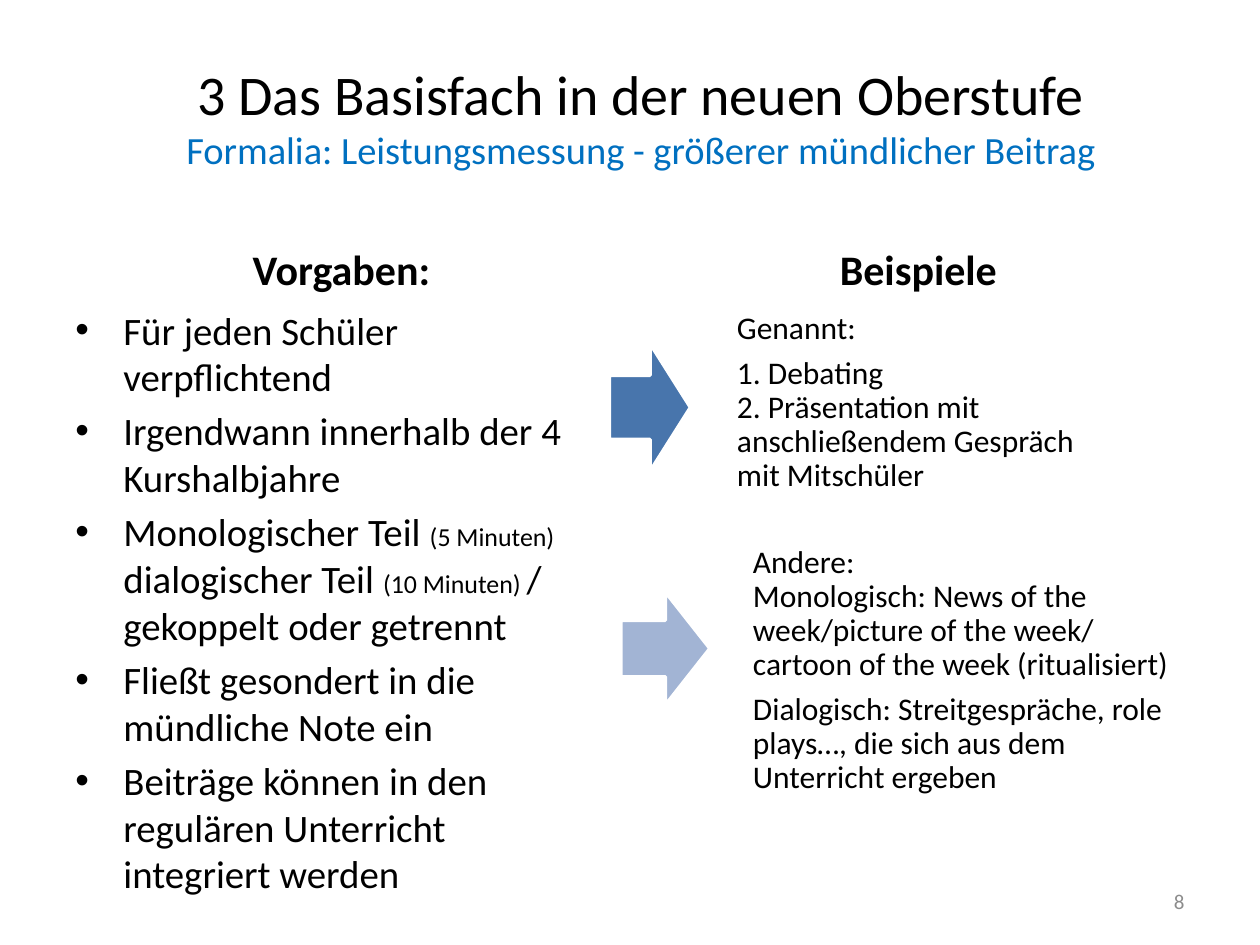
from dataclasses import dataclass

from lxml import etree
from pptx import Presentation, util as u
from pptx.dml.color import RGBColor
from pptx.enum import shapes, text
from pptx.oxml import ns

PX = 914400 // 126  # one px in EMU


@dataclass(frozen=True)
class Theme:
    font: str = "Calibri"
    ink: str = "000000"
    accent: str = "0070C0"
    muted: str = "8C8C8C"
    white: str = "FFFFFF"
    arrow_dark: str = "4875AC"
    arrow_light: str = "A2B4D4"
    title: float = 32
    subtitle: float = 22
    heading: float = 24
    bullet: float = 22.2
    detail: float = 14.8
    example: float = 18
    number: float = 12


T = Theme()

# Content: each paragraph is a list of (text, size) or (text, size, colour) runs
TITLE = [("3 Das Basisfach in der neuen Oberstufe\n", T.title),
         ("Formalia: Leistungsmessung - größerer mündlicher Beitrag", T.subtitle, T.accent)]
HEADINGS = [("Vorgaben:", 63), ("Beispiele", 640)]
RULES = [
    [("Für jeden Schüler verpflichtend", T.bullet)],
    [("Irgendwann innerhalb der 4 Kurshalbjahre", T.bullet)],
    [("Monologischer Teil ", T.bullet), ("(5 Minuten) ", T.detail),
     ("dialogischer Teil ", T.bullet), ("(10 Minuten) ", T.detail),
     ("/ gekoppelt oder getrennt", T.bullet)],
    [("Fließt gesondert in die mündliche Note ein", T.bullet)],
    [("Beiträge können in den regulären Unterricht integriert werden", T.bullet)],
]
EXAMPLES = [
    ((719, 300, 407, 224),
     ["Genannt:",
      "1. Debating \n2. Präsentation mit anschließendem Gespräch mit Mitschüler"]),
    ((735, 512, 485, 336),
     ["Andere:\nMonologisch: News of the week/picture of the week/\n"
      "cartoon of the week (ritualisiert)",
      "Dialogisch: Streitgespräche, role plays…, die sich aus dem Unterricht ergeben"]),
]
ARROWS = [
    (shapes.MSO_SHAPE.UP_ARROW, (586, 367, 128, 81), 90, T.arrow_dark),
    (shapes.MSO_SHAPE.DOWN_ARROW, (609, 604, 113, 89), 270, T.arrow_light),
]


def emu(rect):
    return [value * PX for value in rect]


def colour(value):
    return RGBColor.from_string(value)


def write(para, spans, bold=False):
    """Add runs to a paragraph; a newline becomes a line break of the run's size."""
    for words, size, *ink in spans:
        for index, line in enumerate(words.split("\n")):
            if index:
                para.add_line_break()
                mark = para._p.findall(ns.qn("a:br"))[-1]
                etree.SubElement(mark, ns.qn("a:rPr"), sz=str(round(size * 100)))
            if line:
                span = para.add_run()
                span.text = line
                span.font.name = T.font
                span.font.size = u.Pt(size)
                span.font.bold = bold
                span.font.color.rgb = colour(ink[0] if ink else T.ink)


def fill_frame(box, paragraphs, anchor, align, bold=False, before=0, after=0, spacing=1.0):
    frame = box.text_frame
    frame.word_wrap = True
    frame.auto_size = text.MSO_AUTO_SIZE.NONE
    frame.vertical_anchor = anchor
    for index, spans in enumerate(paragraphs):
        para = frame.add_paragraph() if index else frame.paragraphs[0]
        para.alignment = align
        para.line_spacing = spacing
        para.space_before, para.space_after = u.Pt(before), u.Pt(after)
        write(para, spans, bold)
    return frame


def add_bullet(para, indent):
    props = para._p.get_or_add_pPr()
    props.set("marL", str(indent * PX))
    props.set("indent", str(-indent * PX))
    etree.SubElement(props, ns.qn("a:buFont"), typeface="Arial")
    etree.SubElement(props, ns.qn("a:buChar"), char="•")


def main():
    deck = Presentation()
    deck.slide_width, deck.slide_height = emu((1260, 945))
    page = deck.slides.add_slide(deck.slide_layouts[5])
    middle, top, bottom = (text.MSO_ANCHOR.MIDDLE, text.MSO_ANCHOR.TOP,
                           text.MSO_ANCHOR.BOTTOM)
    left, center, right = text.PP_ALIGN.LEFT, text.PP_ALIGN.CENTER, text.PP_ALIGN.RIGHT

    # Title
    title = page.shapes.title
    title.left, title.top, title.width, title.height = emu((74, 37, 1134, 158))
    fill_frame(title, [TITLE], middle, center)

    # Column headings
    for words, x in HEADINGS:
        box = page.shapes.add_textbox(*emu((x, 212, 557, 88)))
        fill_frame(box, [[(words, T.heading)]], bottom, center, bold=True)

    # Bulleted rules
    box = page.shapes.add_textbox(*emu((63, 300, 537, 544)))
    frame = fill_frame(box, RULES, top, left, before=4.4)
    for para in frame.paragraphs:
        add_bullet(para, 48)

    # Arrows towards the examples
    for kind, rect, turn, tone in ARROWS:
        arrow = page.shapes.add_shape(kind, *emu(rect))
        arrow.rotation = turn
        arrow.shadow.inherit = False
        arrow.fill.solid()
        arrow.fill.fore_color.rgb = colour(tone)
        arrow.line.color.rgb = colour(T.white)
        arrow.line.width = u.Pt(2)

    # Examples
    for rect, lines in EXAMPLES:
        box = page.shapes.add_textbox(*emu(rect))
        frame = fill_frame(box, [[(line, T.example)] for line in lines], middle, left,
                           after=6.3, spacing=0.9)
        frame.margin_top = 0
        frame.margin_left = frame.margin_right = frame.margin_bottom = 18 * PX

    # Slide number
    box = page.shapes.add_textbox(*emu((903, 876, 294, 50)))
    fill_frame(box, [[("8", T.number, T.muted)]], middle, right)

    deck.save("out.pptx")


if __name__ == "__main__":
    main()
